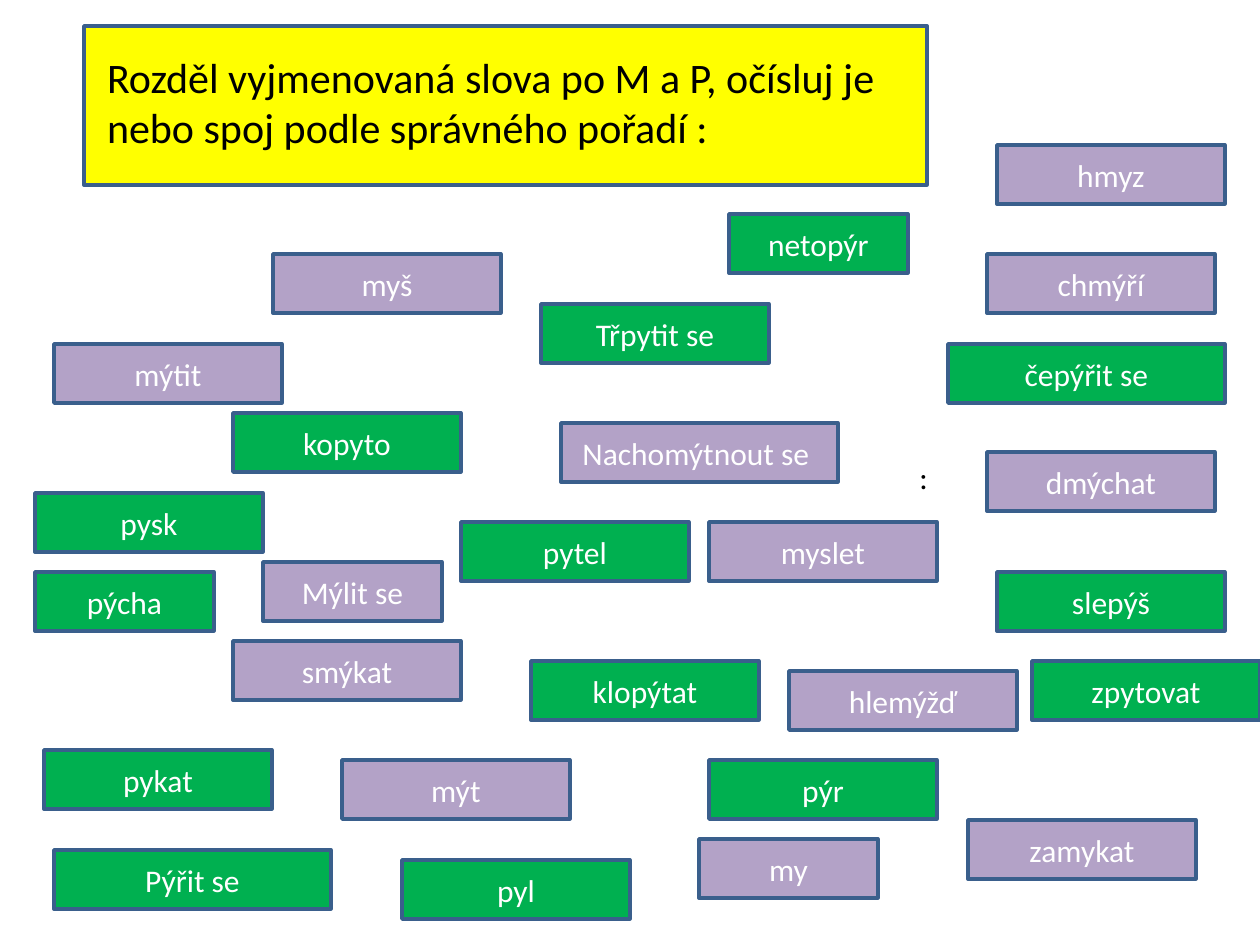
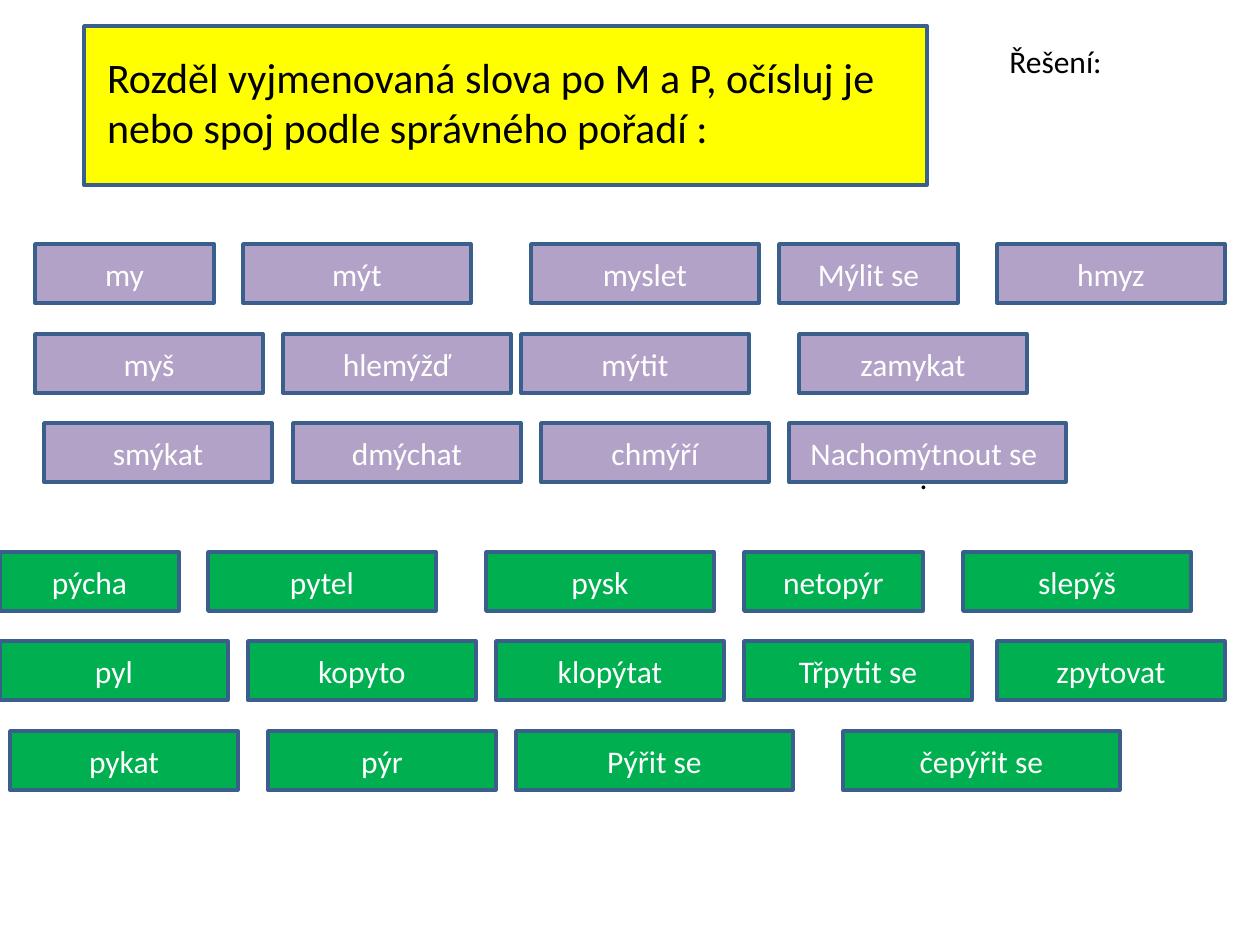
import pptx
import pptx.util
import pptx.dml.color
import pptx.enum.shapes
import pptx.enum.text

PX_PER_INCH = 126
FONT = "Calibri"
COLOURS = {
    "band": "FFFF00",
    "m": "B3A2C7",
    "p": "00B050",
    "outline": "3A5F8C",
    "dark": "000000",
    "light": "FFFFFF",
}
HEADING = "Rozděl vyjmenovaná slova po M a P, očísluj je nebo spoj podle správného pořadí :"

CARD_HEIGHT = 59
CARD_WIDTH = 228
SPECIAL_WIDTHS = {
    "my": 179, "Mýlit se": 179, "pýcha": 179, "netopýr": 179,
    "Nachomýtnout se ": 277, "Pýřit se": 277, "čepýřit se": 277,
}

SCATTERED_WORDS = {
    "m": {
        "my": (699, 839), "mýt": (342, 760), "myslet": (709, 522),
        "Mýlit se": (263, 562), "hmyz": (997, 145), "myš": (273, 254),
        "hlemýžď": (789, 671), "mýtit": (54, 344), "zamykat": (968, 820),
        "smýkat": (233, 641), "dmýchat": (987, 452), "chmýří": (987, 254),
        "Nachomýtnout se ": (561, 423),
    },
    "p": {
        "pýcha": (35, 572), "pytel": (461, 522), "pysk": (35, 493),
        "netopýr": (729, 214), "slepýš": (997, 572), "pyl": (402, 860),
        "kopyto": (233, 413), "klopýtat": (531, 661), "Třpytit se": (541, 304),
        "zpytovat": (1032, 661), "pykat": (44, 750), "pýr": (709, 760),
        "Pýřit se": (54, 850), "čepýřit se": (948, 344),
    },
}

SOLUTION_ROWS = [
    ("m", 244, {"my": 35, "mýt": 243, "myslet": 531, "Mýlit se": 779, "hmyz": 997}),
    ("m", 334, {"myš": 35, "hlemýžď": 283, "mýtit": 521, "zamykat": 799}),
    ("m", 423, {"smýkat": 44, "dmýchat": 293, "chmýří": 541, "Nachomýtnout se ": 789}),
    ("p", 552, {"pýcha": 0, "pytel": 208, "pysk": 486, "netopýr": 744, "slepýš": 963}),
    ("p", 641, {"pyl": 0, "kopyto": 248, "klopýtat": 496, "Třpytit se": 744, "zpytovat": 997}),
    ("p", 731, {"pykat": 10, "pýr": 268, "Pýřit se": 516, "čepýřit se": 843}),
]


def px(length):
    return pptx.util.Emu(round(length * pptx.util.Inches(1) / PX_PER_INCH))


def colour(name):
    return pptx.dml.color.RGBColor.from_string(COLOURS[name])


def paint(shape, fill):
    shape.fill.solid()
    shape.fill.fore_color.rgb = colour(fill)
    shape.line.color.rgb = colour("outline")
    shape.line.width = pptx.util.Pt(2)


def write(shape, text, size, ink, align, anchor):
    frame = shape.text_frame
    frame.text = text
    frame.word_wrap = True
    frame.auto_size = pptx.enum.text.MSO_AUTO_SIZE.NONE
    frame.vertical_anchor = anchor
    paragraph = frame.paragraphs[0]
    paragraph.alignment = align
    paragraph.font.name = FONT
    paragraph.font.size = pptx.util.Pt(size)
    paragraph.font.color.rgb = colour(ink)


def add_exercise_slide(deck):
    slide = deck.slides.add_slide(deck.slide_layouts[5])
    heading = slide.shapes.title
    heading.left, heading.top = px(84), px(26)
    heading.width, heading.height = px(843), px(159)
    paint(heading, "band")
    write(heading, HEADING, 24, "dark",
          pptx.enum.text.PP_ALIGN.LEFT, pptx.enum.text.MSO_ANCHOR.TOP)
    heading.text_frame.margin_left = px(23)
    heading.text_frame.margin_top = px(25)
    add_note(slide, ":", 907, 452, 179, 89)
    return slide


def add_note(slide, text, left, top, width, height):
    note = slide.shapes.add_textbox(px(left), px(top), px(width), px(height))
    write(note, text, 18, "dark",
          pptx.enum.text.PP_ALIGN.LEFT, pptx.enum.text.MSO_ANCHOR.TOP)


def add_word_card(slide, word, group, left, top):
    width = SPECIAL_WIDTHS.get(word, CARD_WIDTH)
    card = slide.shapes.add_shape(
        pptx.enum.shapes.MSO_SHAPE.RECTANGLE,
        px(left), px(top), px(width), px(CARD_HEIGHT))
    card.shadow.inherit = False
    paint(card, group)
    write(card, word, 18, "light",
          pptx.enum.text.PP_ALIGN.CENTER, pptx.enum.text.MSO_ANCHOR.MIDDLE)


def main():
    deck = pptx.Presentation()
    deck.slide_width, deck.slide_height = px(1260), px(945)

    task = add_exercise_slide(deck)
    for group, places in SCATTERED_WORDS.items():
        for word, (left, top) in places.items():
            add_word_card(task, word, group, left, top)

    solution = add_exercise_slide(deck)
    add_note(solution, "Řešení:", 997, 36, 263, 50)
    for group, top, places in SOLUTION_ROWS:
        for word, left in places.items():
            add_word_card(solution, word, group, left, top)

    deck.save("out.pptx")


if __name__ == "__main__":
    main()
